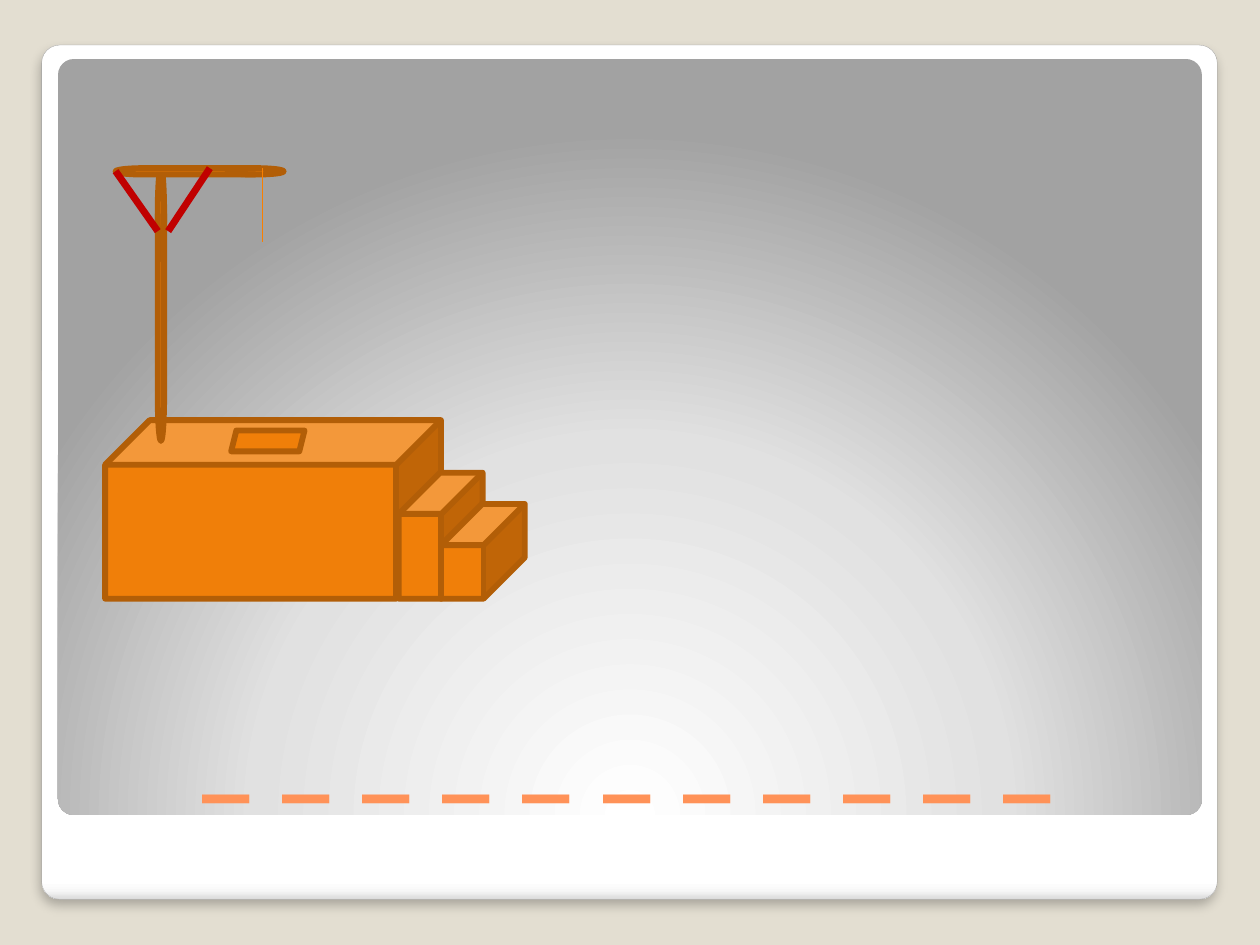
from lxml import etree
from pptx import Presentation
from pptx.dml.color import RGBColor
from pptx.enum.shapes import MSO_CONNECTOR, MSO_SHAPE as Shape
from pptx.enum.text import MSO_ANCHOR, PP_ALIGN
from pptx.oxml import parse_xml
from pptx.oxml.ns import nsdecls, qn
from pptx.util import Cm, Pt

BACKDROP = RGBColor(0xE3, 0xDE, 0xD1)
FRAME_EDGE = RGBColor(0xA4, 0xA4, 0xA4)
WOOD = RGBColor(0xF0, 0x7F, 0x09)
WOOD_EDGE = RGBColor(0xB2, 0x5E, 0x07)
ROPE = RGBColor(0xF9, 0x7F, 0x00)
BRACE = RGBColor(0xC0, 0x00, 0x00)
BLANKS = RGBColor(0xFF, 0x92, 0x58)

DOWNWARD = '<a:lin ang="5400000" scaled="0"/>'
FROM_BELOW = ('<a:path path="circle"><a:fillToRect l="50000" t="175000" '
              'r="50000" b="-75000"/></a:path>')
SOFT_SHADOW = (f'<a:effectLst {nsdecls("a")}><a:outerShdw blurRad="76200" '
               'dist="50800" dir="5400000" algn="tl" rotWithShape="0">'
               '<a:srgbClr val="000000"><a:alpha val="25000"/></a:srgbClr>'
               '</a:outerShdw></a:effectLst>')


def add_figure(slide, kind, box, adjust=None):
    figure = slide.shapes.add_shape(kind, *map(Cm, box))
    figure.shadow.inherit = False
    if adjust is not None:
        figure.adjustments[0] = adjust
    return figure


def add_panel(slide, box, stops, direction):
    """Rounded panel with a gradient given as (percent, colour) stops."""
    panel = add_figure(slide, Shape.ROUNDED_RECTANGLE, box, 0.021)
    panel.line.fill.background()
    stop_xml = "".join(
        f'<a:gs pos="{percent * 1000}"><a:srgbClr val="{colour}"/></a:gs>'
        for percent, colour in stops)
    gradient = parse_xml(f'<a:gradFill {nsdecls("a")} rotWithShape="1">'
                         f'<a:gsLst>{stop_xml}</a:gsLst>{direction}</a:gradFill>')
    panel._element.spPr.find(qn("a:prstGeom")).addnext(gradient)
    return panel


def add_timber(slide, kind, box, adjust=None):
    timber = add_figure(slide, kind, box, adjust)
    timber.fill.solid()
    timber.fill.fore_color.rgb = WOOD
    timber.line.color.rgb = WOOD_EDGE
    timber.line.width = Pt(3.35)


def add_strand(slide, ends, colour, width):
    strand = slide.shapes.add_connector(MSO_CONNECTOR.STRAIGHT, *map(Cm, ends))
    strand.line.color.rgb = colour
    strand.line.width = Pt(width)
    etree.SubElement(strand._element.spPr, qn("a:effectLst"))


def add_word_blanks(slide, text, box):
    blanks = slide.shapes.add_textbox(*map(Cm, box))
    frame = blanks.text_frame
    frame.word_wrap = True
    frame.vertical_anchor = MSO_ANCHOR.BOTTOM
    paragraph = frame.paragraphs[0]
    paragraph.alignment = PP_ALIGN.CENTER
    run = paragraph.add_run()
    run.text = text
    look = {"name": "DejaVu Sans", "size": Pt(54), "bold": True}
    for attribute, value in look.items():
        setattr(run.font, attribute, value)
    run.font.color.rgb = BLANKS


def main():
    deck = Presentation()
    deck.slide_width, deck.slide_height = Cm(25.4), Cm(19.05)
    slide = deck.slides.add_slide(deck.slide_layouts[6])
    slide.background.fill.solid()
    slide.background.fill.fore_color.rgb = BACKDROP

    # White frame and the grey stage inside it
    frame = add_panel(slide, (0.84, 0.91, 23.7, 17.22),
                      [(0, "FFFFFF"), (98, "FFFFFF"), (99, "F7F7F7"),
                       (100, "DADADA")], DOWNWARD)
    frame.line.color.rgb = FRAME_EDGE
    frame.line.width = Pt(0.16)
    frame._element.spPr.find(qn("a:effectLst")).getparent().replace(
        frame._element.spPr.find(qn("a:effectLst")), parse_xml(SOFT_SHADOW))
    add_panel(slide, (1.17, 1.19, 23.06, 15.24),
              [(0, "FFFFFF"), (55, "E1E1E1"), (100, "A2A2A2")], FROM_BELOW)

    # Letters to guess
    add_word_blanks(slide, "_ _ _ _ _ _ _ _ _ _ _", (1.27, 13.34, 22.73, 2.92))

    # Platform and its steps, all standing on one ground line
    ground = 12.07
    add_timber(slide, Shape.CUBE, (2.12, 8.47, 6.77, ground - 8.47))
    for left, height in ((8.04, 2.54), (8.89, 1.91)):
        add_timber(slide, Shape.CUBE, (left, ground - height, 1.69, height), 0.492)

    # Post, beam and trapdoor
    beam_top = 3.39
    add_timber(slide, Shape.FLOWCHART_MAGNETIC_DISK, (3.18, beam_top, 0.13, 5.5))
    add_timber(slide, Shape.FLOWCHART_DIRECT_ACCESS_STORAGE,
               (2.33, beam_top, 3.39, 0.13))
    add_timber(slide, Shape.PARALLELOGRAM, (4.66, 8.68, 1.48, 0.42))

    # Rope and braces
    add_strand(slide, (5.29, beam_top, 5.29, 4.87), ROPE, 0.75)
    for ends in ((2.33, 3.45, 3.18, 4.66), (3.39, 4.66, 4.23, beam_top)):
        add_strand(slide, ends, BRACE, 4)

    deck.save("out.pptx")


if __name__ == "__main__":
    main()
